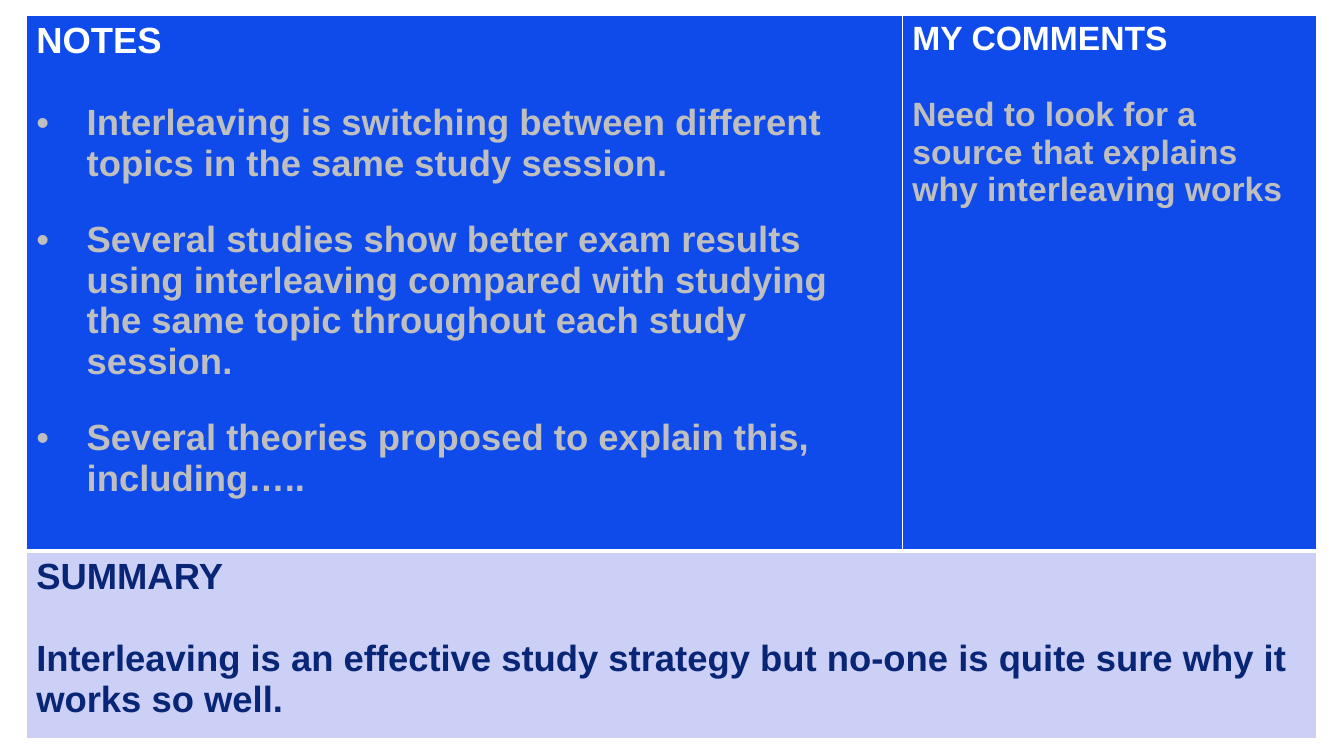
from lxml import etree
from pptx import Presentation
from pptx.dml.color import RGBColor
from pptx.oxml import ns
from pptx.util import Inches, Pt

COLORS = {
    "white": "FFFFFF",
    "blue": "0F4BEB",
    "lavender": "CCD0F7",
    "navy": "082576",
    "grey": "BFBFBF",
}
LINE_HEIGHT = 1.15


def add_element(parent, tag, **attributes):
    return etree.SubElement(parent, ns.qn(tag), attributes)


def write_paragraph(cell, content, size, color, gap=0, bullet=False):
    frame = cell.text_frame
    paragraph = frame.add_paragraph() if frame.text else frame.paragraphs[0]
    paragraph.space_before = Pt(round(gap * LINE_HEIGHT, 1))
    if bullet:
        properties = paragraph._p.get_or_add_pPr()
        properties.set("marL", str(Inches(0.5)))
        properties.set("indent", str(-Inches(0.5)))
        add_element(properties, "a:buFont", typeface="Arial")
        add_element(properties, "a:buChar", char="•")
    run = paragraph.add_run()
    run.text = content
    run.font.name = "Arial"
    run.font.size = Pt(size)
    run.font.bold = True
    run.font.color.rgb = RGBColor.from_string(COLORS[color])


def style_cell(cell, fill, bottom=1):
    properties = cell._tc.get_or_add_tcPr()
    widths = {"a:lnL": 1, "a:lnR": 1, "a:lnT": 1, "a:lnB": bottom}
    for tag, width in widths.items():
        line = add_element(properties, tag, w=str(Pt(width)))
        solid = add_element(line, "a:solidFill")
        add_element(solid, "a:srgbClr", val=COLORS["white"])
    cell.fill.solid()
    cell.fill.fore_color.rgb = RGBColor.from_string(COLORS[fill])


def fill_notes(cell):
    write_paragraph(cell, "NOTES", 26, "white")
    notes = [
        "Interleaving is switching between different topics in the same study session.",
        "Several studies show better exam results using interleaving compared with "
        "studying the same topic throughout each study session.",
        "Several theories proposed to explain this, including…..",
    ]
    for index, note in enumerate(notes):
        write_paragraph(cell, note, 26, "grey", gap=22 if index else 26, bullet=True)


def fill_comments(cell):
    write_paragraph(cell, "MY COMMENTS", 24, "white")
    comment = "Need to look for a source that explains why interleaving works"
    write_paragraph(cell, comment, 24, "grey", gap=24)


def fill_summary(cell):
    write_paragraph(cell, "SUMMARY", 26, "navy")
    summary = (
        "Interleaving is an effective study strategy but no-one is quite sure "
        "why it works so well."
    )
    write_paragraph(cell, summary, 26, "navy", gap=26)


def add_notes_table(slide, left, top, column_widths, row_heights):
    table = slide.shapes.add_table(
        len(row_heights), len(column_widths), Inches(left), Inches(top),
        Inches(sum(column_widths)), Inches(sum(row_heights)),
    ).table
    table.horz_banding = False
    for column, width in zip(table.columns, column_widths):
        column.width = Inches(width)
    for row, height in zip(table.rows, row_heights):
        row.height = Inches(height)
    table.cell(1, 0).merge(table.cell(1, 1))
    for column in range(len(column_widths)):
        style_cell(table.cell(0, column), "blue", bottom=3)
        style_cell(table.cell(1, column), "lavender")
    fill_notes(table.cell(0, 0))
    fill_comments(table.cell(0, 1))
    fill_summary(table.cell(1, 0))


def main():
    presentation = Presentation()
    presentation.slide_width = Inches(13.33)
    presentation.slide_height = Inches(7.5)
    slide = presentation.slides.add_slide(presentation.slide_layouts[6])
    add_notes_table(slide, 0.26, 0.15, [8.69, 4.11], [5.32, 1.86])
    presentation.save("out.pptx")


if __name__ == "__main__":
    main()
